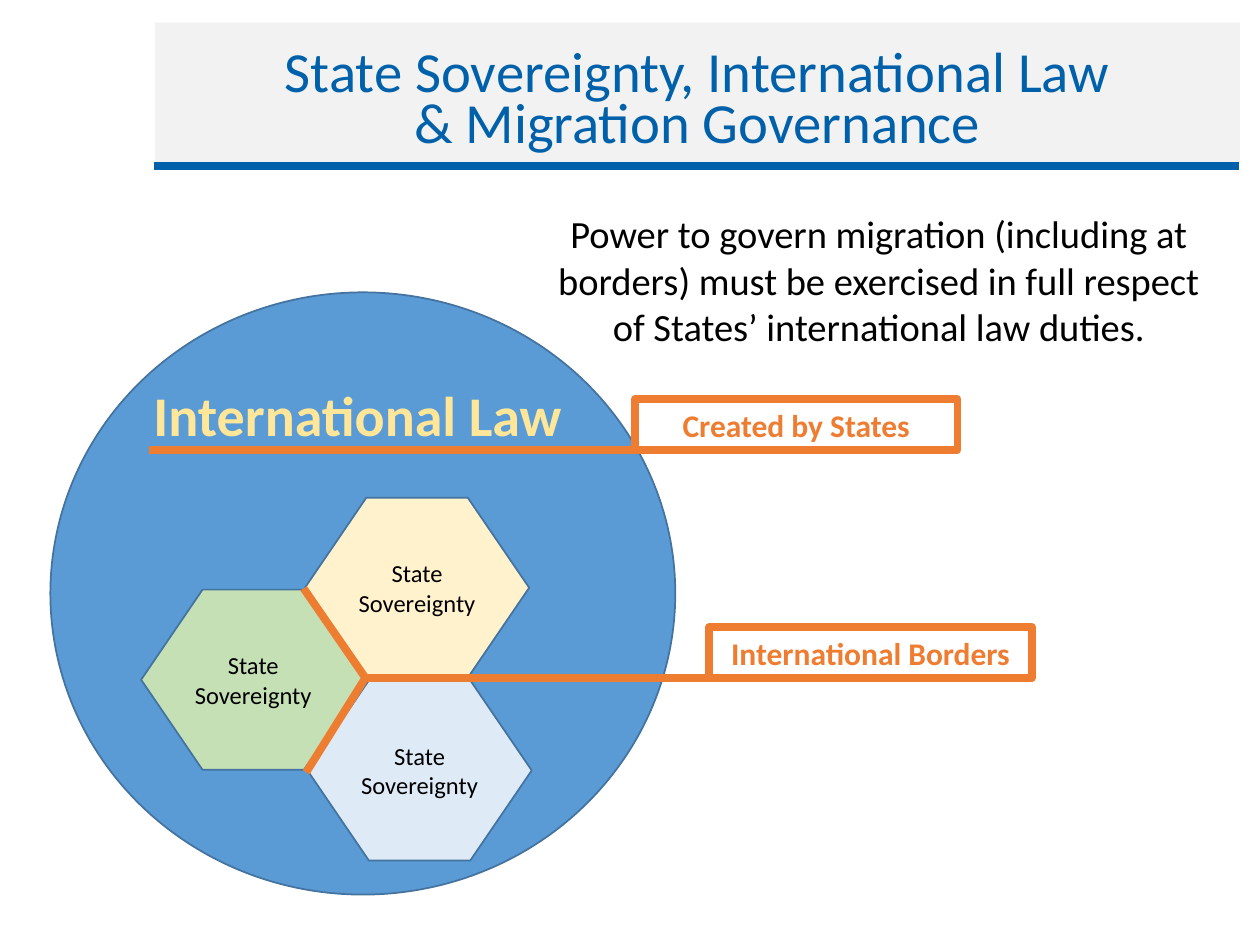
import pptx
import pptx.util
from lxml import etree
from pptx.dml.color import RGBColor
from pptx.enum.shapes import MSO_CONNECTOR, MSO_SHAPE
from pptx.enum.text import MSO_ANCHOR, MSO_AUTO_SIZE, PP_ALIGN
from pptx.oxml.ns import qn
from pptx.util import Inches

COLORS = {
    "title": "0061AA", "band": "F2F2F2", "text": "000000", "white": "FFFFFF",
    "law": "5B9BD5", "outline": "43739E", "heading": "FFE699",
    "border": "ED7D31", "label": "EE7D31",
    "green": "C5E0B4", "yellow": "FFF2CC", "blue": "DEEBF7",
}
HEAVY = 4.5


def color(name):
    return RGBColor.from_string(COLORS[name])


def write(shape, text, *, size, ink="text", bold=False, align=PP_ALIGN.CENTER,
          anchor=MSO_ANCHOR.TOP, wrap=True, spacing=None):
    """Fill a shape with text; each item of a list becomes a paragraph."""
    frame = shape.text_frame
    frame.auto_size = MSO_AUTO_SIZE.NONE
    frame.word_wrap = wrap
    frame.vertical_anchor = anchor
    lines = [text] if isinstance(text, str) else text
    for index, line in enumerate(lines):
        para = frame.paragraphs[0] if index == 0 else frame.add_paragraph()
        para.text = line
        para.alignment = align
        if spacing:
            para.line_spacing = spacing
        for span in para.runs:
            span.font.name = "Calibri"
            span.font.size = pptx.util.Pt(size)
            span.font.bold = bold
            span.font.color.rgb = color(ink)


def add_text(page, box, text, **style):
    shape = page.shapes.add_textbox(*map(Inches, box))
    write(shape, text, **style)


def add_shape(page, kind, box, fill, outline, weight=1):
    shape = page.shapes.add_shape(kind, *map(Inches, box))
    shape.shadow.inherit = False
    shape.fill.solid()
    shape.fill.fore_color.rgb = color(fill)
    shape.line.color.rgb = color(outline)
    shape.line.width = pptx.util.Pt(weight)
    return shape


def add_line(page, start, end, ink="border"):
    line = page.shapes.add_connector(
        MSO_CONNECTOR.STRAIGHT, *map(Inches, (*start, *end)))
    line.line.color.rgb = color(ink)
    line.line.width = pptx.util.Pt(HEAVY)
    etree.SubElement(line._element.spPr, qn("a:effectLst"))


def add_title(page, box):
    left, top, width, height = box
    add_line(page, (left - 0.01, top + height + 0.02),
             (left + width - 0.01, top + height + 0.02), "title")
    title = page.shapes.title
    title.left, title.top, title.width, title.height = map(Inches, box)
    title.fill.solid()
    title.fill.fore_color.rgb = color("band")
    frame = title.text_frame
    frame.margin_left = frame.margin_top = frame.margin_right = Inches(0.2)
    frame.margin_bottom = Inches(0.05)
    write(title, "State Sovereignty, International Law\v& Migration Governance",
          size=32.4, ink="title", anchor=MSO_ANCHOR.MIDDLE, spacing=0.75)


def add_state(page, box, text, fill):
    state = add_shape(page, MSO_SHAPE.HEXAGON, box, fill, "outline")
    state.adjustments[0] = 0.341
    state.adjustments[1] = 1.155
    write(state, text, size=14, anchor=MSO_ANCHOR.MIDDLE)


def add_label(page, box, text):
    label = add_shape(page, MSO_SHAPE.RECTANGLE, box, "white", "label", HEAVY)
    fill = label._element.spPr.find(qn("a:solidFill"))
    etree.SubElement(fill[0], qn("a:alpha"), val="95000")
    write(label, text, size=18, ink="label", bold=True)


def add_law_diagram(page, box):
    """Circle of international law around three states and their borders."""
    left, top, _, _ = box

    def at(x, y):
        return left + x, top + y

    add_shape(page, MSO_SHAPE.OVAL, box, "law", "outline")
    states = [
        (0.72, 2.36, "State Sovereignty", "green"),
        (2.02, 1.63, "State Sovereignty", "yellow"),
        (2.04, 3.08, ["State", "Sovereignty"], "blue"),
    ]
    for x, y, text, fill in states:
        add_state(page, (*at(x, y), 1.78, 1.43), text, fill)

    add_text(page, (*at(0.72, 0.65), 3.47, 0.64), "International Law", size=32,
             ink="heading", bold=True, align=PP_ALIGN.LEFT, wrap=False)

    meeting = at(2.5, 3.06)
    for end in (at(2.01, 2.35), at(2.03, 3.81), at(7.67, 3.06)):
        add_line(page, meeting, end)
    add_label(page, (*at(5.23, 2.66), 2.56, 0.4), "International Borders")
    add_line(page, at(0.78, 1.25), at(5.96, 1.25))
    add_label(page, (*at(4.64, 0.85), 2.56, 0.4), "Created by States")


def main():
    deck = pptx.Presentation()
    deck.slide_width, deck.slide_height = Inches(10), Inches(7.5)
    page = deck.slides.add_slide(deck.slide_layouts[5])
    add_title(page, (1.23, 0.18, 8.61, 1.12))
    add_text(page, (4.2, 1.62, 5.55, 1.58),
             "Power to govern migration (including at borders) must be exercised "
             "in full respect of States’ international law duties.", size=22)
    add_law_diagram(page, (0.4, 2.32, 4.96, 4.78))
    deck.save("out.pptx")


if __name__ == "__main__":
    main()
